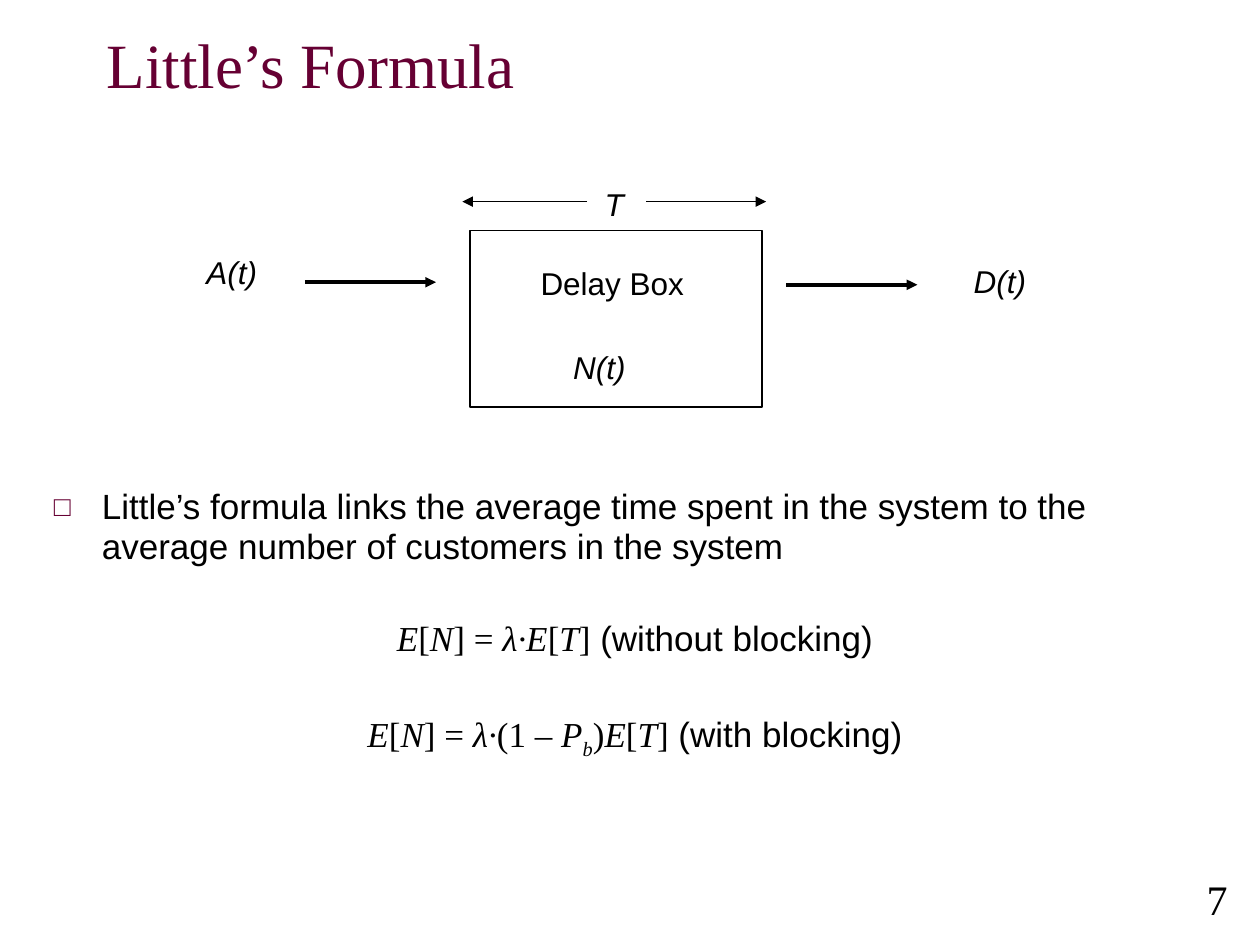
from lxml.etree import SubElement
from pptx import Presentation
from pptx.dml.color import RGBColor
from pptx.enum.shapes import MSO_CONNECTOR as Connector, MSO_SHAPE as Shape
from pptx.enum.text import MSO_ANCHOR as Anchor, PP_ALIGN as Align
from pptx.oxml.ns import qn
from pptx.util import Inches, Pt

BLACK = RGBColor(0x00, 0x00, 0x00)
MAROON = RGBColor(0x66, 0x00, 0x33)
SANS, SERIF = "Arial", "Times New Roman"


def add_text(para, text, size, name=SANS, color=BLACK, italic=False):
    span = para.add_run()
    span.text = text
    style = {"size": Pt(size), "name": name, "italic": italic}
    for key, value in style.items():
        setattr(span.font, key, value)
    span.font.color.rgb = color
    return span


def add_box(left, top, width, height, align=Align.LEFT):
    box = page.shapes.add_textbox(Inches(left), Inches(top), Inches(width), Inches(height))
    box.text_frame.word_wrap = True
    para = box.text_frame.paragraphs[0]
    para.alignment = align
    return box.text_frame, para


deck = Presentation()
deck.slide_width, deck.slide_height = Inches(10), Inches(7.5)
page = deck.slides.add_slide(deck.slide_layouts[6])

frame, para = add_box(8.59, 6.88, 1.25, 0.51, Align.RIGHT)
add_text(para, "7", 24, SERIF)

frame, para = add_box(0.75, 0, 8.5, 1)
frame.vertical_anchor = Anchor.MIDDLE
add_text(para, "Little’s Formula", 36, SERIF, MAROON)

frame, para = add_box(0.33, 3.82, 9.42, 3.18)
para.line_spacing = 0.95
props = para._p.get_or_add_pPr()
props.set("marL", str(Inches(0.38)))
props.set("indent", str(-Inches(0.38)))
bullet_color = SubElement(props, qn("a:buClr"))
SubElement(bullet_color, qn("a:srgbClr")).set("val", str(MAROON))
SubElement(props, qn("a:buSzPct")).set("val", "80000")
SubElement(props, qn("a:buFont")).set("typeface", SANS)
SubElement(props, qn("a:buChar")).set("char", "□")
add_text(para, "Little’s formula links the average time spent in the system to the "
               "average number of customers in the system", 20)

formulas = [
    (["E", "[", "N", "] = ", "λ·E", "[", "T", "]"], " (without blocking)"),
    (["E", "[", "N", "] = ", "λ·", "(1 – ", "P", "b", ")", "E", "[", "T", "]"], " (with blocking)"),
]
for terms, condition in formulas:
    para = frame.add_paragraph()
    para.alignment = Align.CENTER
    para.line_spacing = 0.95
    para.space_before = Pt(30)
    for term in terms:
        span = add_text(para, term, 20, SERIF, italic=term[0].isalpha())
        if term == "b":
            span.font._element.set("baseline", "-25000")
    add_text(para, condition, 20)

delay_box = page.shapes.add_shape(Shape.RECTANGLE, Inches(3.73), Inches(1.83), Inches(2.32), Inches(1.4))
delay_box.shadow.inherit = False
delay_box.fill.background()
delay_box.line.color.rgb = BLACK
delay_box.line.width = Pt(1)

arrows = [
    (2.42, 3.46, 2.24, 2),
    (6.24, 7.28, 2.26, 2),
    (4.66, 3.67, 1.6, 1),
    (5.13, 6.08, 1.6, 1),
]
for start, end, height, weight in arrows:
    arrow = page.shapes.add_connector(
        Connector.STRAIGHT, Inches(start), Inches(height), Inches(end), Inches(height))
    arrow.line.color.rgb = BLACK
    arrow.line.width = Pt(weight)
    SubElement(arrow.line._get_or_add_ln(), qn("a:tailEnd")).set("type", "triangle")
    SubElement(arrow._element.spPr, qn("a:effectLst"))

labels = [
    ("A(t)", 1.54, 1.96, 0.84, Align.LEFT, True),
    ("D(t)", 7.63, 2.03, 0.94, Align.LEFT, True),
    ("Delay Box", 3.81, 2.05, 2.1, Align.CENTER, False),
    ("N(t)", 4.45, 2.71, 1.08, Align.LEFT, True),
    ("T", 4.7, 1.42, 0.34, Align.LEFT, True),
]
for text, left, top, width, align, italic in labels:
    frame, para = add_box(left, top, width, 0.4, align)
    add_text(para, text, 18, italic=italic)

deck.save("out.pptx")
